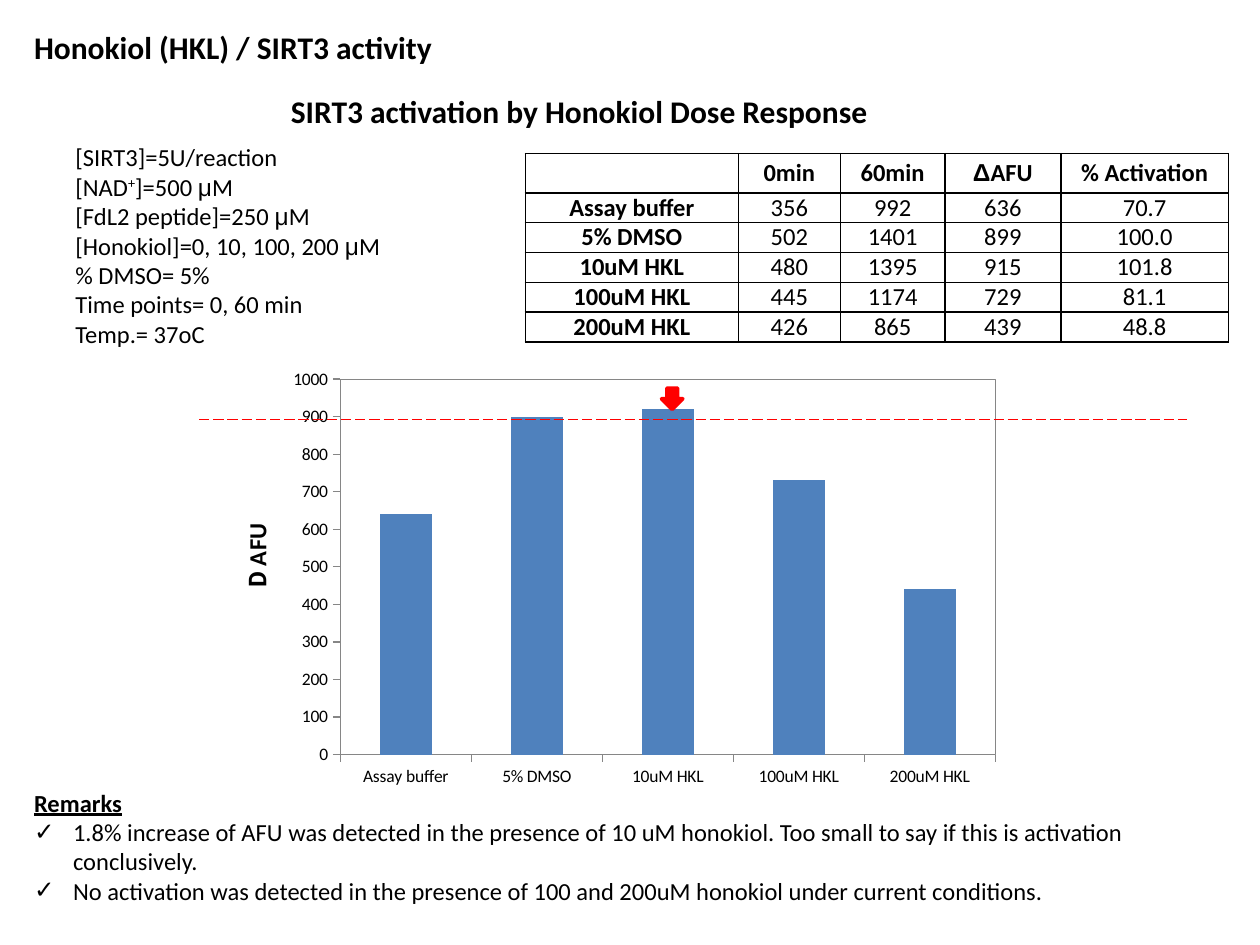
from lxml import etree
from pptx import Presentation
from pptx.chart.data import CategoryChartData
from pptx.dml.color import RGBColor
from pptx.enum.chart import XL_CHART_TYPE, XL_TICK_MARK
from pptx.enum.dml import MSO_LINE
from pptx.enum.shapes import MSO_CONNECTOR, MSO_SHAPE
from pptx.enum.text import MSO_ANCHOR, MSO_AUTO_SIZE, PP_ALIGN
from pptx.oxml import parse_xml
from pptx.oxml.ns import nsdecls, qn
from pptx.util import Inches, Pt

BLACK = RGBColor(0x00, 0x00, 0x00)
RED = RGBColor(0xFF, 0x00, 0x00)
BLUE = RGBColor(0x4F, 0x81, 0xBD)
GRAY = RGBColor(0x86, 0x86, 0x86)
OUTSIDE = XL_TICK_MARK.OUTSIDE

# Content
TITLE = "Honokiol (HKL) / SIRT3 activity"
SUBTITLE = "SIRT3 activation by Honokiol Dose Response"
CONDITIONS = [
    "[SIRT3]=5U/reaction",
    "[NAD^+^]=500 μM",  # carets enclose a superscript
    "[FdL2 peptide]=250 μM",
    "[Honokiol]=0, 10, 100, 200 μM",
    "% DMSO= 5%",
    "Time points= 0, 60 min",
    "Temp.= 37oC",
]
HEADER = ["", "0min", "60min", "ΔAFU", "% Activation"]
RESULTS = [
    ("Assay buffer", 356, 992, 636, 70.7),
    ("5% DMSO", 502, 1401, 899, 100.0),
    ("10uM HKL", 480, 1395, 915, 101.8),
    ("100uM HKL", 445, 1174, 729, 81.1),
    ("200uM HKL", 426, 865, 439, 48.8),
]
CHART_VALUES = [640, 900, 920, 730, 440]
COLUMN_WIDTHS = [1.69, 0.81, 0.83, 0.92, 1.33]
HEADER_HEIGHT, ROW_HEIGHT = 0.31, 0.22
REMARKS_HEADING = "Remarks"
REMARKS = [
    "1.8% increase of AFU was detected in the presence of 10 uM honokiol. "
    "Too small to say if this is activation conclusively.",
    "No activation was detected in the presence of 100 and 200uM honokiol "
    "under current conditions.",
]
PLOT_LAYOUT = {"layoutTarget": "inner", "xMode": "edge", "yMode": "edge",
               "x": 0.15, "y": 0.05, "w": 0.82, "h": 0.83}
AXIS_TITLE_LAYOUT = {"xMode": "edge", "yMode": "edge", "x": 0.02, "y": 0.36}


def place(shape, left, top, width, height):
    shape.left, shape.top = Inches(left), Inches(top)
    shape.width, shape.height = Inches(width), Inches(height)


def format_font(font, size, bold=False, name="Calibri"):
    font.size, font.bold, font.name = Pt(size), bold, name
    font.color.rgb = BLACK


def add_runs(paragraph, text, size, bold=False):
    """Greek letters go in Arial; text between carets is raised."""
    for index, part in enumerate(text.split("^")):
        for greek in "μΔ":
            part = part.replace(greek, f"|{greek}|")
        for piece in filter(None, part.split("|")):
            run = paragraph.add_run()
            run.text = piece
            format_font(run.font, size, bold, "Arial" if piece in "μΔ" else "Calibri")
            if index % 2:
                run.font._element.set("baseline", "30000")


def add_text(slide, box, lines, size, bold=False):
    text_frame = slide.shapes.add_textbox(*map(Inches, box)).text_frame
    text_frame.word_wrap = False
    for index, line in enumerate(lines):
        paragraph = text_frame.add_paragraph() if index else text_frame.paragraphs[0]
        add_runs(paragraph, line, size, bold)


def add_borders(cell):
    properties = cell._tc.get_or_add_tcPr()
    for index, side in enumerate(("lnL", "lnR", "lnT", "lnB")):
        properties.insert(index, parse_xml(
            f'<a:{side} {nsdecls("a")} w="12700"><a:solidFill>'
            f'<a:srgbClr val="{BLACK}"/></a:solidFill></a:{side}>'))


def add_results_table(slide):
    rows = [HEADER] + [[str(value) for value in row] for row in RESULTS]
    heights = [HEADER_HEIGHT] + [ROW_HEIGHT] * len(RESULTS)
    table = slide.shapes.add_table(
        len(rows), len(HEADER), Inches(4.17), Inches(1.22),
        Inches(sum(COLUMN_WIDTHS)), Inches(sum(heights))).table
    for column, width in zip(table.columns, COLUMN_WIDTHS):
        column.width = Inches(width)
    for row_index, values in enumerate(rows):
        table.rows[row_index].height = Inches(heights[row_index])
        for column_index, value in enumerate(values):
            cell = table.cell(row_index, column_index)
            cell.margin_left = cell.margin_right = 0
            cell.margin_top = cell.margin_bottom = 0
            cell.vertical_anchor = MSO_ANCHOR.BOTTOM if row_index else MSO_ANCHOR.MIDDLE
            cell.fill.background()
            add_borders(cell)
            paragraph = cell.text_frame.paragraphs[0]
            paragraph.alignment = PP_ALIGN.CENTER
            add_runs(paragraph, value, 14, row_index == 0 or column_index == 0)


def set_layout(parent, position, settings):
    for old_layout in parent.findall(qn("c:layout")):
        parent.remove(old_layout)
    layout = etree.Element(qn("c:layout"))
    manual = etree.SubElement(layout, qn("c:manualLayout"))
    for name, value in settings.items():
        etree.SubElement(manual, qn(f"c:{name}")).set("val", str(value))
    parent.insert(position, layout)


def add_activity_chart(slide):
    data = CategoryChartData()
    data.categories = [row[0] for row in RESULTS]
    data.add_series("Series 1", CHART_VALUES)
    chart = slide.shapes.add_chart(
        XL_CHART_TYPE.COLUMN_CLUSTERED, Inches(1.75), Inches(2.83),
        Inches(6.34), Inches(3.59), data).chart
    chart.has_legend = chart.has_title = False
    format_font(chart.font, 10)
    plot = chart.plots[0]
    plot.gap_width, plot.vary_by_categories = 150, False
    fill = plot.series[0].format.fill
    fill.solid()
    fill.fore_color.rgb = BLUE

    # Axes
    for axis in (chart.category_axis, chart.value_axis):
        axis.has_major_gridlines = False
        axis.major_tick_mark = OUTSIDE
        axis.format.line.color.rgb = GRAY
    value_axis = chart.value_axis
    value_axis.minimum_scale, value_axis.maximum_scale = 0, 1000
    value_axis.major_unit = 100
    axis_title = value_axis.axis_title
    paragraph = axis_title.text_frame.paragraphs[0]
    for text, font_name in (("D", "Roboto"), (" AFU", "Calibri")):
        run = paragraph.add_run()
        run.text = text
        format_font(run.font, 14, True, font_name)
    set_layout(axis_title._element, 1, AXIS_TITLE_LAYOUT)

    # Fixed inner plot area with a thin frame
    plot_area = chart._chartSpace.chart.plotArea
    set_layout(plot_area, 0, PLOT_LAYOUT)
    plot_area.append(parse_xml(
        f'<c:spPr {nsdecls("c", "a")}><a:noFill/><a:ln w="9525"><a:solidFill>'
        f'<a:srgbClr val="{GRAY}"/></a:solidFill></a:ln></c:spPr>'))


def add_remarks(body):
    place(body, 0.17, 6.2, 9.5, 1.04)
    text_frame = body.text_frame
    text_frame.text = "\n".join([REMARKS_HEADING] + REMARKS)
    text_frame.auto_size = MSO_AUTO_SIZE.NONE
    for index, paragraph in enumerate(text_frame.paragraphs):
        heading = index == 0
        paragraph.space_before = Pt(0)
        font = paragraph.runs[0].font
        format_font(font, 14, heading)
        font.underline = heading
        properties = paragraph._p.get_or_add_pPr()
        indent = 0 if heading else Inches(0.31)
        properties.set("marL", str(indent))
        properties.set("indent", str(-indent))
        if heading:
            etree.SubElement(properties, qn("a:buNone"))
        else:
            etree.SubElement(properties, qn("a:buFont")).set("typeface", "Arial")
            etree.SubElement(properties, qn("a:buChar")).set("char", "✓")


def add_markers(slide):
    reference = slide.shapes.add_connector(
        MSO_CONNECTOR.STRAIGHT, Inches(1.58), Inches(3.33), Inches(9.42), Inches(3.33))
    reference._element.remove(reference._element.find(qn("p:style")))
    reference.line.fill.solid()
    reference.line.fill.fore_color.rgb = RED
    reference.line.width = Pt(0.75)
    reference.line.dash_style = MSO_LINE.LONG_DASH
    etree.SubElement(reference._element.spPr, qn("a:effectLst"))
    arrow = slide.shapes.add_shape(
        MSO_SHAPE.DOWN_ARROW, Inches(5.25), Inches(3.08), Inches(0.17), Inches(0.17))
    arrow.shadow.inherit = False
    arrow.fill.solid()
    arrow.fill.fore_color.rgb = RED
    arrow.line.color.rgb = RED
    arrow.line.width = Pt(2)


def main():
    presentation = Presentation()
    presentation.slide_width, presentation.slide_height = Inches(10), Inches(7.5)
    slide = presentation.slides.add_slide(presentation.slide_layouts[1])

    # Title
    title = slide.shapes.title
    place(title, 0.17, 0.17, 3.39, 0.4)
    title.text_frame.text = TITLE
    title.text_frame.word_wrap = False
    title.text_frame.auto_size = MSO_AUTO_SIZE.NONE
    title.text_frame.paragraphs[0].alignment = PP_ALIGN.LEFT
    format_font(title.text_frame.paragraphs[0].runs[0].font, 18, True)

    # Conditions, results and remarks
    add_results_table(slide)
    add_text(slide, (0.5, 1.08, 2.64, 1.75), CONDITIONS, 14)
    add_remarks(slide.placeholders[1])
    add_activity_chart(slide)
    add_text(slide, (2.21, 0.68, 4.82, 0.4), [SUBTITLE], 18, True)
    add_markers(slide)
    presentation.save("out.pptx")


if __name__ == "__main__":
    main()
